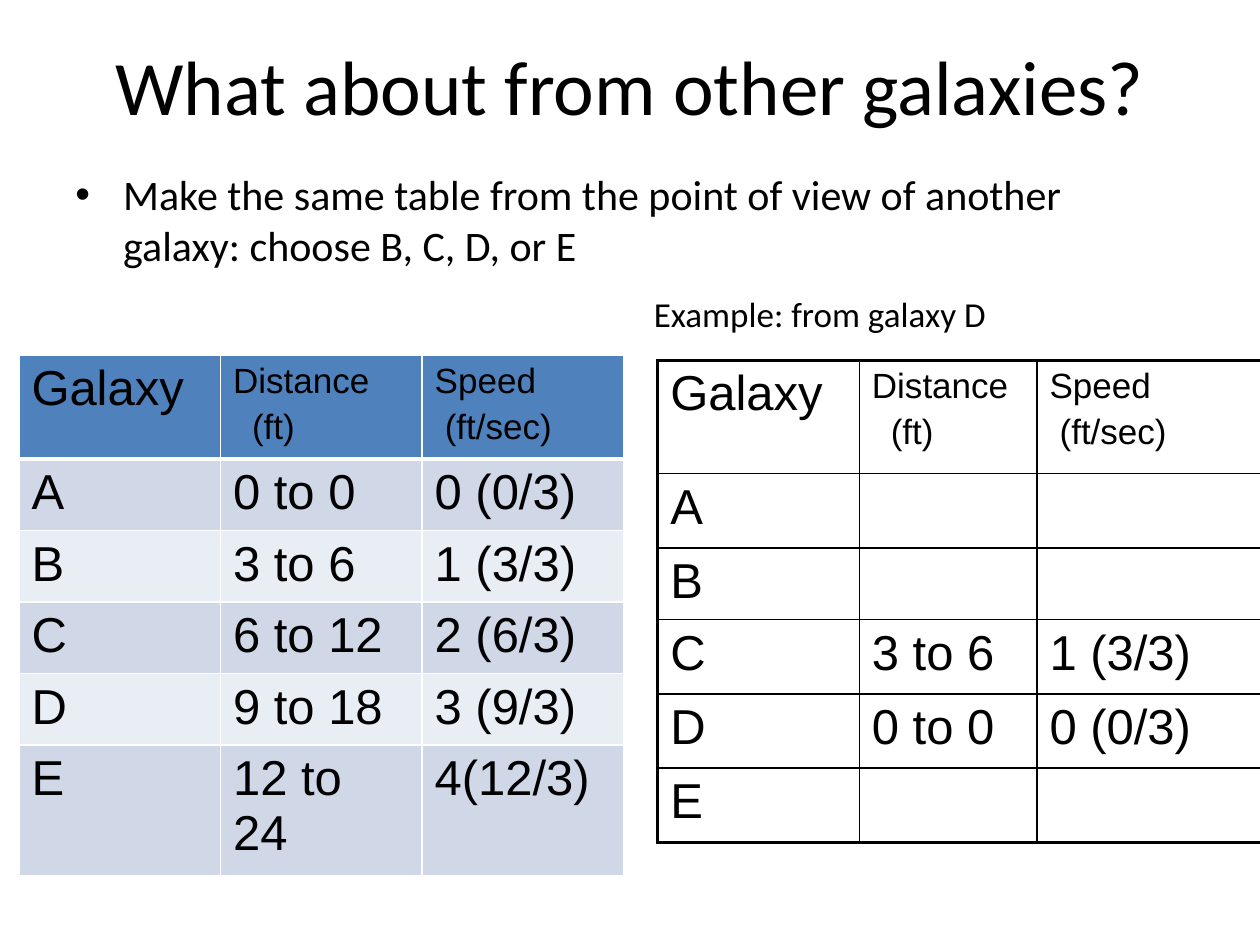
from dataclasses import dataclass

from lxml.etree import SubElement
from pptx import Presentation
from pptx.dml.color import RGBColor
from pptx.enum.text import MSO_ANCHOR as Anchor, PP_ALIGN as Align
from pptx.oxml.ns import qn
from pptx.util import Inches, Pt

BLACK = "000000"
WHITE = "FFFFFF"


@dataclass(frozen=True)
class Line:
    text: str
    size: int = 28
    indent: float = 0


@dataclass(frozen=True)
class Caption:
    text: str
    box: tuple[float, float, float, float]
    size: int
    align: Align = Align.LEFT
    anchor: Anchor = Anchor.TOP
    bulleted: bool = False


@dataclass(frozen=True)
class GalaxyTable:
    left: float
    top: float
    widths: tuple[float, ...]
    heights: tuple[float, ...]
    readings: tuple[tuple[str, str, str], ...]
    rule_color: str
    edge: float
    under_header: float
    fills: tuple[str, ...] = ()


HEADER = (
    (Line("Galaxy"),),
    (Line("Distance", 20), Line("(ft)", 20, 0.15)),
    (Line("Speed", 20), Line("(ft/sec)", 20, 0.08)),
)

CAPTIONS = (
    Caption("What about from other galaxies?", (0.5, 0.05, 9, 1.25), 44,
            Align.CENTER, Anchor.MIDDLE),
    Caption("Make the same table from the point of view of another galaxy: "
            "choose B, C, D, or E", (0.5, 1.29, 9, 4.95), 24, bulleted=True),
    Caption("Example: from galaxy D", (5.09, 2.27, 4.41, 0.44), 20),
)

TABLES = (
    GalaxyTable(
        0.15, 2.82, (1.6, 1.6, 1.6), (0.78,) + (0.53,) * 5,
        (("A", "0 to 0", "0 (0/3)"), ("B", "3 to 6", "1 (3/3)"),
         ("C", "6 to 12", "2 (6/3)"), ("D", "9 to 18", "3 (9/3)"),
         ("E", "12 to 24", "4(12/3)")),
        WHITE, edge=1, under_header=3, fills=("4F81BD", "D0D8E8", "E9EDF4")),
    GalaxyTable(
        5.22, 2.86, (1.6, 1.41, 1.78), (0.9, 0.59, 0.56, 0.59, 0.59, 0.59),
        (("A", "", ""), ("B", "", ""), ("C", "3 to 6", "1 (3/3)"),
         ("D", "0 to 0", "0 (0/3)"), ("E", "", "")),
        BLACK, edge=2.25, under_header=1),
)


def rgb(color: str) -> RGBColor:
    return RGBColor.from_string(color)


def style(paragraph, face: str, size: int) -> None:
    font = paragraph.font
    font.name, font.size, font.bold = face, Pt(size), False
    font.color.rgb = rgb(BLACK)


def space_before(paragraph, percent: int):
    properties = paragraph._p.get_or_add_pPr()
    spacing = SubElement(properties, qn("a:spcBef"))
    SubElement(spacing, qn("a:spcPct"), val=str(percent * 1000))
    properties.insert(0, spacing)
    return properties


def add_caption(slide, caption: Caption) -> None:
    frame = slide.shapes.add_textbox(*map(Inches, caption.box)).text_frame
    frame.word_wrap = True
    frame.vertical_anchor = caption.anchor
    paragraph = frame.paragraphs[0]
    paragraph.text = caption.text
    paragraph.alignment = caption.align
    style(paragraph, "Calibri", caption.size)
    if caption.bulleted:
        properties = space_before(paragraph, 20)
        properties.set("marL", str(Inches(0.38)))
        properties.set("indent", str(Inches(-0.38)))
        bullet_font = SubElement(properties, qn("a:buFont"), typeface="Arial")
        bullet_font.addnext(SubElement(properties, qn("a:buChar"), char="•"))
        properties.append(properties.find(qn("a:defRPr")))


def write_cell(cell, lines: tuple[Line, ...]) -> None:
    frame = cell.text_frame
    for number, line in enumerate(lines):
        paragraph = frame.add_paragraph() if number else frame.paragraphs[0]
        paragraph.text = line.text
        style(paragraph, "Arial", line.size)
        properties = space_before(paragraph, 20)
        if line.indent:
            properties.set("marL", str(Inches(line.indent)))
            properties.set("indent", "0")


def rule_cell(cell, color: str, weights: dict[str, float]) -> None:
    properties = cell._tc.get_or_add_tcPr()
    for side, weight in weights.items():
        rule = SubElement(properties, qn(f"a:ln{side}"), w=str(Pt(weight)))
        SubElement(SubElement(rule, qn("a:solidFill")), qn("a:srgbClr"), val=color)


def add_galaxy_table(slide, spec_table: GalaxyTable) -> None:
    widths, heights = spec_table.widths, spec_table.heights
    table = slide.shapes.add_table(
        len(heights), len(widths), Inches(spec_table.left), Inches(spec_table.top),
        Inches(sum(widths)), Inches(sum(heights))).table
    table.first_row = table.horz_banding = False
    for column, width in zip(table.columns, widths):
        column.width = Inches(width)
    for row, height in zip(table.rows, heights):
        row.height = Inches(height)

    body = tuple(tuple((Line(text),) for text in reading)
                 for reading in spec_table.readings)
    edge, under_header = spec_table.edge, spec_table.under_header
    horizontal = [edge, under_header] + [1] * (len(heights) - 2) + [edge]
    vertical = [edge] + [1] * (len(widths) - 1) + [edge]
    for r, galaxy in enumerate((HEADER,) + body):
        for c, lines in enumerate(galaxy):
            cell = table.cell(r, c)
            write_cell(cell, lines)
            rule_cell(cell, spec_table.rule_color,
                      {"L": vertical[c], "R": vertical[c + 1],
                       "T": horizontal[r], "B": horizontal[r + 1]})
            if spec_table.fills:
                header_fill, *bands = spec_table.fills
                cell.fill.solid()
                cell.fill.fore_color.rgb = rgb(bands[(r - 1) % 2] if r else header_fill)
            else:
                cell.fill.background()


def main() -> None:
    presentation = Presentation()
    presentation.slide_width, presentation.slide_height = Inches(10), Inches(7.5)
    slide = presentation.slides.add_slide(presentation.slide_layouts[6])
    for caption in CAPTIONS:
        add_caption(slide, caption)
    for galaxy_table in TABLES:
        add_galaxy_table(slide, galaxy_table)
    presentation.save("out.pptx")


if __name__ == "__main__":
    main()
